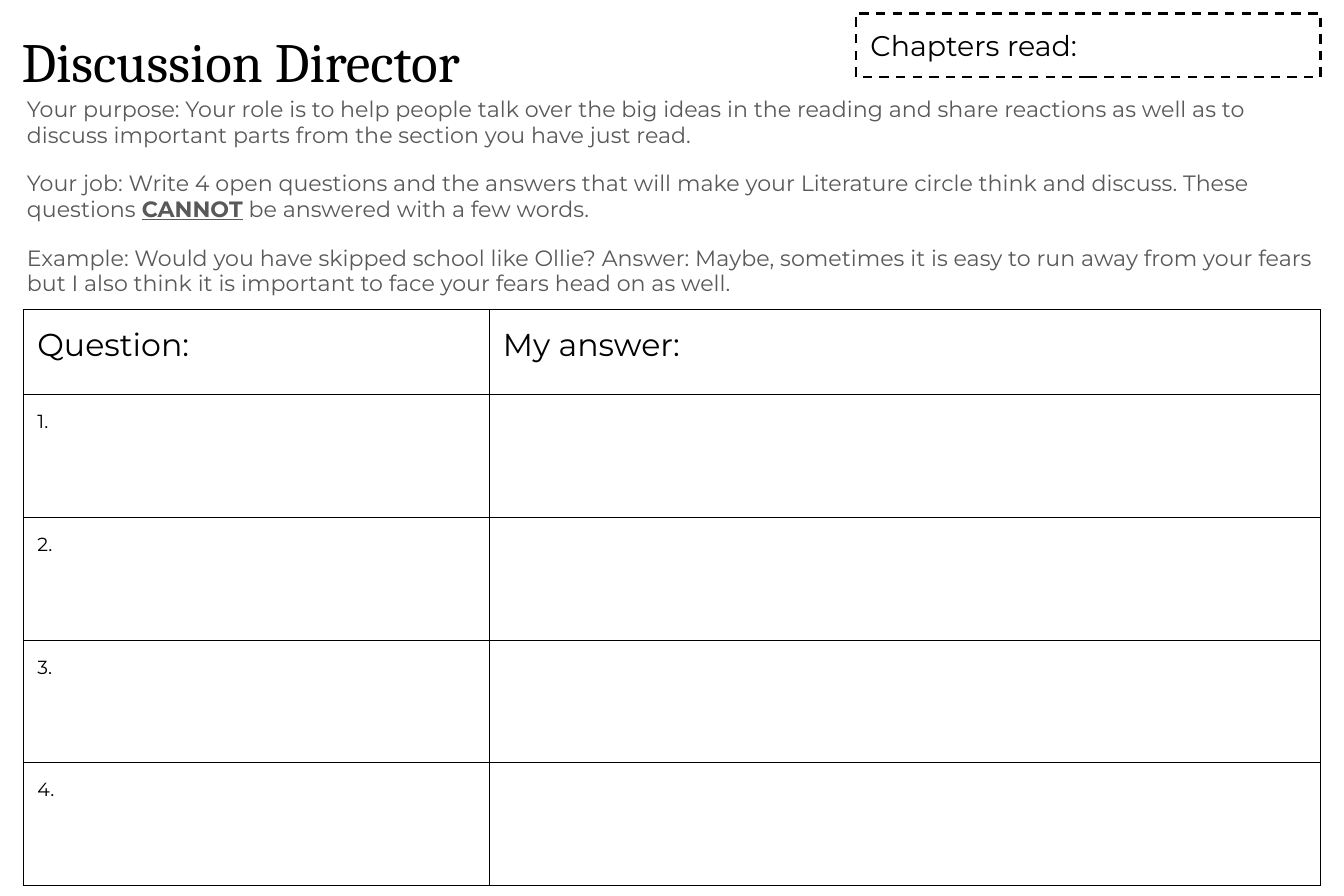
from pptx import Presentation
from pptx.dml.color import RGBColor
from pptx.enum.dml import MSO_LINE
from pptx.enum.shapes import MSO_SHAPE
from pptx.enum.text import MSO_ANCHOR as ANCHOR, PP_ALIGN as ALIGN
from pptx.oxml import parse_xml
from pptx.oxml.ns import nsdecls
from pptx.util import Pt

BLACK, GRAY = "000000", "595959"
SERIF, SANS = "Cambria", "Montserrat"
INSET = 9.14
PURPOSE = [
    [("Your purpose: Your role is to help people talk over the big ideas in the reading "
      "and share reactions as well as to discuss important parts from the section you "
      "have just read.", False)],
    [("Your job: Write 4 open questions and the answers that will make your Literature "
      "circle think and discuss. These questions ", False),
     ("CANNOT", True),
     (" be answered with a few words.", False)],
    [("Example: Would you have skipped school like Ollie? Answer: Maybe, sometimes it is "
      "easy to run away from your fears but I also think it is important to face your "
      "fears head on as well.", False)],
]


def rgb(value):
    """Turn a hex string into a colour."""
    return RGBColor.from_string(value)


def add_run(p, text, size, font=SANS, color=BLACK, strong=False):
    """Add one run, bold and underlined when strong."""
    r = p.add_run()
    r.text = text
    r.font.size = Pt(size)
    r.font.name = font
    r.font.color.rgb = rgb(color)
    if strong:
        r.font.bold = r.font.underline = True


def set_frame(tf, anchor):
    """Wrap a text frame, anchor it and set its equal insets."""
    tf.word_wrap = True
    tf.vertical_anchor = anchor
    tf.margin_left = tf.margin_top = tf.margin_right = tf.margin_bottom = Pt(INSET)
    return tf


def add_title(s, x, y, w, h):
    """Place the role name."""
    sp = s.shapes.add_textbox(Pt(x), Pt(y), Pt(w), Pt(h))
    tf = set_frame(sp.text_frame, ANCHOR.MIDDLE)
    add_run(tf.paragraphs[0], "Discussion Director", 35, SERIF)


def add_purpose(s, x, y, w, h):
    """Place the purpose, job and example paragraphs."""
    sp = s.shapes.add_textbox(Pt(x), Pt(y), Pt(w), Pt(h))
    tf = set_frame(sp.text_frame, ANCHOR.TOP)
    for i, runs in enumerate(PURPOSE):
        p = tf.add_paragraph() if i else tf.paragraphs[0]
        p.line_spacing = 0.95
        p.space_before = Pt(15 if i else 0)
        for text, strong in runs:
            add_run(p, text, 14, color=GRAY, strong=strong)


def add_chapters(s, x, y, w, h):
    """Place the dashed box for the chapters read."""
    sp = s.shapes.add_shape(MSO_SHAPE.RECTANGLE, Pt(x), Pt(y), Pt(w), Pt(h))
    sp.shadow.inherit = False
    sp.fill.background()
    sp.line.color.rgb = rgb(BLACK)
    sp.line.width = Pt(1.5)
    sp.line.dash_style = MSO_LINE.DASH
    p = set_frame(sp.text_frame, ANCHOR.MIDDLE).paragraphs[0]
    p.alignment = ALIGN.LEFT
    add_run(p, "Chapters read:", 18)


def style_cell(cell):
    """Give a cell its insets, thin black borders and no fill."""
    cell.margin_left = cell.margin_right = Pt(8.8)
    cell.margin_top = cell.margin_bottom = Pt(10)
    cell.vertical_anchor = ANCHOR.TOP
    tc_pr = cell._tc.get_or_add_tcPr()
    for side in ("lnL", "lnR", "lnT", "lnB"):
        tc_pr.append(parse_xml(
            f'<a:{side} {nsdecls("a")} w="{Pt(0.75)}"><a:solidFill>'
            f'<a:srgbClr val="{BLACK}"/></a:solidFill></a:{side}>'))
    cell.fill.background()


def add_questions(s, x, y, w, h, head_h=53.6, question_w=294.5):
    """Place the table with a header and four numbered rows."""
    rows = [("Question:", "My answer:")] + [(f"{n}.", "") for n in range(1, 5)]
    table = s.shapes.add_table(len(rows), 2, Pt(x), Pt(y), Pt(w), Pt(h)).table
    table.first_row = table.horz_banding = False
    table.columns[0].width = Pt(question_w)
    table.columns[1].width = Pt(w - question_w)
    for i, texts in enumerate(rows):
        table.rows[i].height = Pt((h - head_h) / 4 if i else head_h)
        for cell, text in zip(table.rows[i].cells, texts):
            style_cell(cell)
            if text:
                add_run(cell.text_frame.paragraphs[0], text, 12 if i else 20)


def main():
    """Build the worksheet slide and save it."""
    prs = Presentation()
    prs.slide_width, prs.slide_height = Pt(850.32), Pt(566.64)
    s = prs.slides.add_slide(prs.slide_layouts[6])
    add_title(s, 4.5, 6.5, 793, 63.4)
    add_purpose(s, 7.9, 52.6, 834.5, 134.6)
    add_questions(s, 14.9, 195.9, 820.8, 364.2)
    add_chapters(s, 541.6, 8.5, 293.9, 40.3)
    prs.save("out.pptx")


if __name__ == "__main__":
    main()
